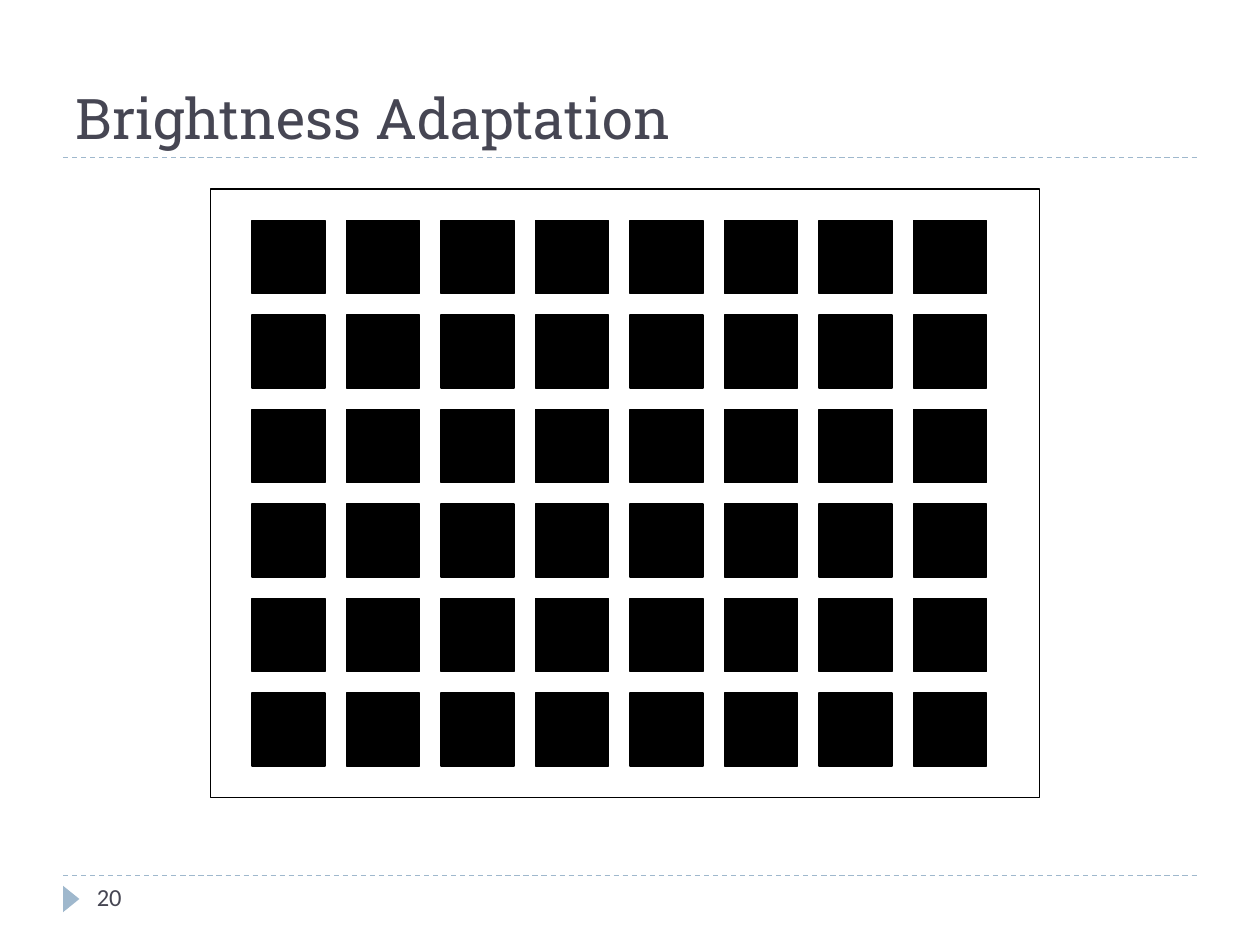
from dataclasses import dataclass
from itertools import product

from lxml import etree
from pptx import Presentation
from pptx.dml.color import RGBColor
from pptx.enum.dml import MSO_LINE
from pptx.enum.shapes import MSO_CONNECTOR, MSO_SHAPE
from pptx.enum.text import MSO_ANCHOR, PP_ALIGN
from pptx.oxml.ns import qn
from pptx.util import Inches, Pt

DASH = MSO_LINE.DASH
STRAIGHT = MSO_CONNECTOR.STRAIGHT
RECTANGLE = MSO_SHAPE.RECTANGLE
TRIANGLE = MSO_SHAPE.ISOSCELES_TRIANGLE
BOTTOM = MSO_ANCHOR.BOTTOM
TOP = MSO_ANCHOR.TOP
LEFT = PP_ALIGN.LEFT


@dataclass(frozen=True)
class Theme:
    ink: RGBColor = RGBColor(0x46, 0x46, 0x53)
    accent: RGBColor = RGBColor(0x9F, 0xB8, 0xCD)
    black: RGBColor = RGBColor(0, 0, 0)
    white: RGBColor = RGBColor(255, 255, 255)
    title_font: str = "Roboto Slab"
    body_font: str = "Calibri"
    title_size: Pt = Pt(32)
    number_size: Pt = Pt(14)
    line_width: Pt = Pt(0.75)


THEME = Theme()


def set_text(shape, text, font_name, size, anchor):
    frame = shape.text_frame
    frame.word_wrap = True
    frame.vertical_anchor = anchor
    paragraph = frame.paragraphs[0]
    paragraph.text = text
    paragraph.alignment = LEFT
    paragraph.font.name = font_name
    paragraph.font.size = size
    paragraph.font.color.rgb = THEME.ink


def add_rule(slide, left, top, width):
    rule = slide.shapes.add_connector(STRAIGHT, left, top, left + width, top)
    rule.line.color.rgb = THEME.accent
    rule.line.width = THEME.line_width
    rule.line.dash_style = DASH
    etree.SubElement(rule._element.spPr, qn("a:effectLst"))


def add_filled(shapes, kind, box, fill, outline=None):
    shape = shapes.add_shape(kind, *box)
    shape.shadow.inherit = False
    shape.fill.solid()
    shape.fill.fore_color.rgb = fill
    if outline is None:
        shape.line.fill.background()
    else:
        shape.line.color.rgb = outline
        shape.line.width = THEME.line_width
    return shape


def add_header(slide, left, top, width, height):
    """Title with a dashed rule along its bottom edge."""
    add_rule(slide, left, top + height, width)
    title = slide.shapes.title
    title.left, title.top, title.width, title.height = left, top, width, height
    set_text(title, "Brightness Adaptation", THEME.title_font, THEME.title_size, BOTTOM)


def add_footer(slide, left, top, width, height):
    """Dashed rule, arrow marker and slide number."""
    add_rule(slide, left, top, width)
    marker_box = (left - Inches(0.04), top + Inches(0.12), Inches(0.21), Inches(0.13))
    marker = add_filled(slide.shapes, TRIANGLE, marker_box, THEME.accent)
    marker.rotation = 90
    number = slide.shapes.add_textbox(left + Inches(0.17), top, Inches(2.17), height)
    set_text(number, "20", THEME.body_font, THEME.number_size, TOP)


def add_grid(slide, left, top, width, height, rows=6, columns=8):
    """Framed grid of black squares, kept together as one group."""
    shapes = slide.shapes.add_group_shape().shapes
    add_filled(shapes, RECTANGLE, (left, top, width, height), THEME.white, THEME.black)
    pitch, side = Inches(0.75), Inches(0.58)
    first_left, first_top = left + Inches(0.33), top + Inches(0.25)
    for row, column in product(range(rows), range(columns)):
        box = (first_left + column * pitch, first_top + row * pitch, side, side)
        add_filled(shapes, RECTANGLE, box, THEME.black, THEME.black)


def main():
    presentation = Presentation()
    presentation.slide_width = Inches(10)
    presentation.slide_height = Inches(7.5)
    slide = presentation.slides.add_slide(presentation.slide_layouts[5])
    slide.background.fill.solid()
    slide.background.fill.fore_color.rgb = THEME.white

    add_header(slide, Inches(0.5), Inches(0.25), Inches(9), Inches(1))
    add_footer(slide, Inches(0.5), Inches(6.95), Inches(9), Inches(0.4))
    add_grid(slide, Inches(1.67), Inches(1.5), Inches(6.58), Inches(4.83))
    presentation.save("out.pptx")


if __name__ == "__main__":
    main()
